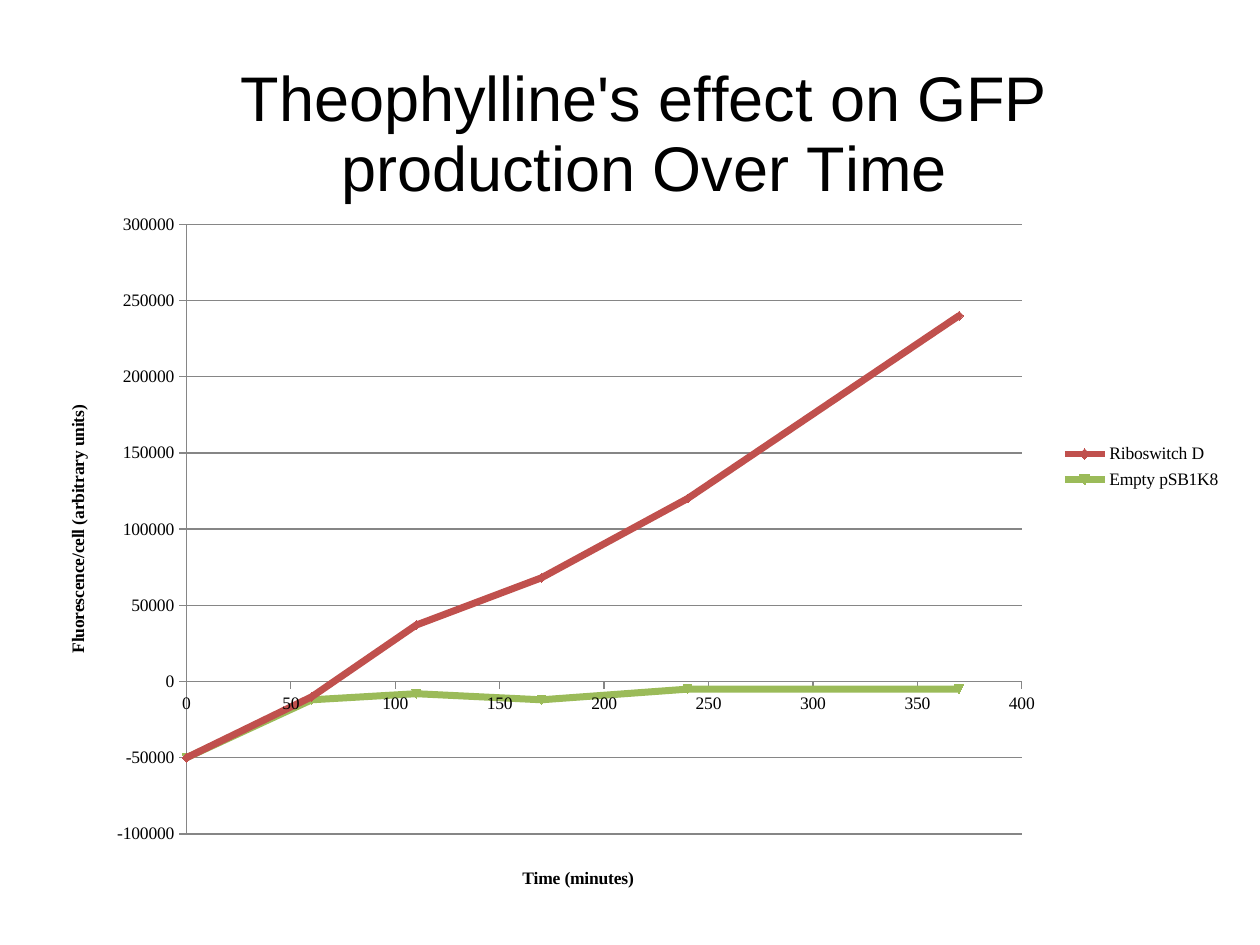
from lxml import etree
from pptx import Presentation
from pptx.chart.data import XyChartData
from pptx.dml.color import RGBColor
from pptx.enum.chart import (XL_CHART_TYPE, XL_LEGEND_POSITION,
                             XL_MARKER_STYLE, XL_TICK_MARK)
from pptx.oxml.ns import qn
from pptx.util import Inches, Pt

SCATTER = XL_CHART_TYPE.XY_SCATTER_LINES
AUTO_MARKER = XL_MARKER_STYLE.AUTOMATIC
LEGEND_RIGHT = XL_LEGEND_POSITION.RIGHT
TICK_OUT, TICK_NONE = XL_TICK_MARK.OUTSIDE, XL_TICK_MARK.NONE

WIDTH, HEIGHT = Inches(10), Inches(7.5)
CHART_WIDTH, CHART_HEIGHT = 9.48, 7.09
BLACK, GREY = "000000", "868686"
SERIF, SANS = "Times New Roman", "Arial"

MINUTES = [0, 60, 110, 170, 240, 370]
SERIES = [
    ("Riboswitch D", "C0504D", [-50000, -10000, 37000, 68000, 120000, 240000]),
    ("Empty pSB1K8", "9BBB59", [-50000, -12000, -8000, -12000, -5000, -5000]),
]


def rgb(code):
    return RGBColor.from_string(code)


def style_font(font, name, size, bold=False):
    font.name, font.size, font.bold = name, Pt(size), bold
    font.color.rgb = rgb(BLACK)


def style_line(line, color, width):
    line.color.rgb = rgb(color)
    line.width = Pt(width)


def set_title(title, text, name, size, bold=False):
    span = title.text_frame.paragraphs[0].add_run()
    span.text = text
    style_font(span.font, name, size, bold)


def place(element, left, top, width=None, height=None, inner=False):
    """Lay out a chart part by hand, in inches from the chart's corner."""
    layout = element.find(qn("c:layout"))
    if layout is None:
        layout = etree.Element(qn("c:layout"))
        before = element.find(qn("c:overlay"))
        if before is None:
            element.insert(0, layout)
        else:
            before.addprevious(layout)
    for child in list(layout):
        layout.remove(child)
    manual = etree.SubElement(layout, qn("c:manualLayout"))
    entries = [("layoutTarget", "inner")] if inner else []
    entries += [("xMode", "edge"), ("yMode", "edge"),
                ("x", left / CHART_WIDTH), ("y", top / CHART_HEIGHT)]
    if width is not None:
        entries += [("w", width / CHART_WIDTH), ("h", height / CHART_HEIGHT)]
    for tag, value in entries:
        etree.SubElement(manual, qn("c:" + tag)).set("val", str(value))


def style_axis(axis, title, low, high, step, title_at):
    axis.minimum_scale, axis.maximum_scale, axis.major_unit = low, high, step
    axis.major_tick_mark, axis.minor_tick_mark = TICK_OUT, TICK_NONE
    axis.tick_labels.number_format = "General"
    axis.tick_labels.number_format_is_linked = False
    style_font(axis.tick_labels.font, SERIF, 10)
    style_line(axis.format.line, GREY, 0.75)
    set_title(axis.axis_title, title, SERIF, 10, bold=True)
    place(axis.axis_title._element, *title_at)


def style_series(series, color, symbol):
    """Colour a series; the index picks its automatic marker symbol."""
    series.smooth = False
    style_line(series.format.line, color, 4)
    series._element.find(qn("c:idx")).set("val", str(symbol))
    marker = series.marker
    marker.style, marker.size = AUTO_MARKER, 5
    marker.format.fill.solid()
    marker.format.fill.fore_color.rgb = rgb(color)
    style_line(marker.format.line, color, 0.75)


def add_scatter(page):
    data = XyChartData()
    for name, _, values in SERIES:
        series = data.add_series(name)
        for minute, value in zip(MINUTES, values):
            series.add_data_point(minute, value)
    return page.shapes.add_chart(
        SCATTER, Inches(0.32), Inches(0.16),
        Inches(CHART_WIDTH), Inches(CHART_HEIGHT), data).chart


def main():
    deck = Presentation()
    deck.slide_width, deck.slide_height = WIDTH, HEIGHT
    page = deck.slides.add_slide(deck.slide_layouts[6])
    chart = add_scatter(page)
    style_font(chart.font, SERIF, 10)
    set_title(chart.chart_title,
              "Theophylline's effect on GFP production Over Time", SANS, 36)
    chart.chart_title.include_in_layout = False
    place(chart.chart_title._element, 1.5, 0.21)

    style_axis(chart.category_axis, "Time (minutes)", 0, 400, 50, (3.8, 6.69))
    style_axis(chart.value_axis, "Fluorescence/cell (arbitrary units)",
               -100000, 300000, 50000, (0.18, 3.03))
    chart.category_axis.has_major_gridlines = False
    chart.value_axis.has_major_gridlines = True
    style_line(chart.value_axis.major_gridlines.format.line, GREY, 0.75)

    for symbol, (series, row) in enumerate(zip(chart.plots[0].series, SERIES), 1):
        style_series(series, row[1], symbol)

    chart.has_legend = True
    chart.legend.position = LEGEND_RIGHT
    chart.legend.include_in_layout = False
    style_font(chart.legend.font, SERIF, 10)
    place(chart.legend._element, 8.03, 3.32, 1.42, 0.45)
    plot_area = chart.plots[0]._element.getparent()
    place(plot_area, 1.16, 1.62, 6.63, 4.84, inner=True)
    deck.save("out.pptx")


if __name__ == "__main__":
    main()
